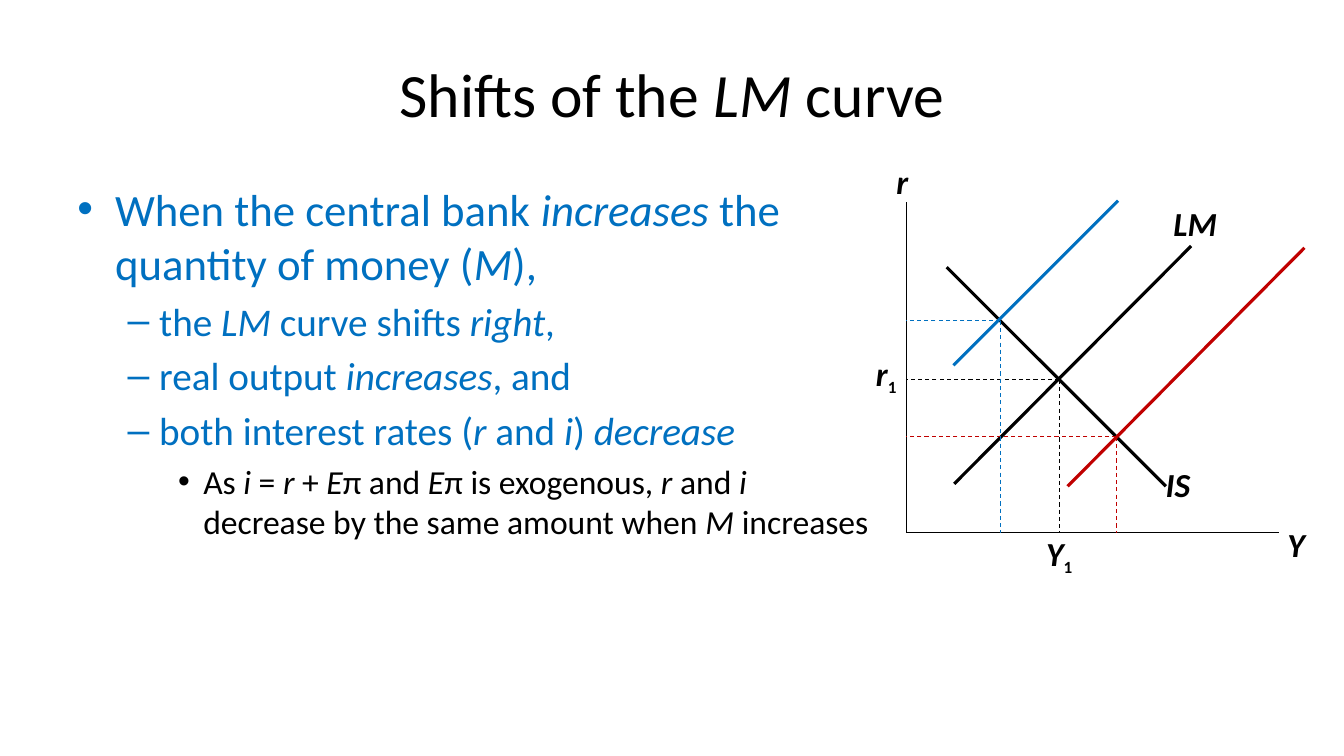
from lxml import etree
from pptx import Presentation
from pptx.dml.color import RGBColor
from pptx.enum.dml import MSO_LINE
from pptx.enum.shapes import MSO_CONNECTOR
from pptx.enum.text import PP_ALIGN
from pptx.oxml.ns import qn
from pptx.util import Inches, Pt

STRAIGHT = MSO_CONNECTOR.STRAIGHT
DASH = MSO_LINE.DASH
LEFT, CENTER = PP_ALIGN.LEFT, PP_ALIGN.CENTER

BLACK = RGBColor(0x00, 0x00, 0x00)
BLUE = RGBColor(0x00, 0x70, 0xC0)
RED = RGBColor(0xC0, 0x00, 0x00)

# The slide is a grid of 160 columns by 90 rows
CELL = Inches(1) / 12
ORIGIN_COLUMN, ORIGIN_ROW = 107.9, 63.4


def add_text(para, text, size, color=BLACK, bold=None, align=None, level=0):
    """Write text in a paragraph; * toggles italic, _ starts a subscript."""
    para.level = level
    para.alignment = align
    for part_number, part in enumerate(text.split("*")):
        for piece_number, piece in enumerate(part.split("_")):
            if not piece:
                continue
            span = para.add_run()
            span.text = piece
            font = span.font
            font.name = "Calibri"
            font.size = Pt(size)
            font.color.rgb = color
            font.bold = bold
            font.italic = part_number % 2 == 1
            if piece_number:
                font.size = Pt(21)
                font.italic = False
                font._element.set("baseline", "-25000")


def add_line(start, end, color, width, dash=None):
    """Draw a line between two points measured from the graph's origin."""
    (x1, y1), (x2, y2) = start, end
    line = slide.shapes.add_connector(
        STRAIGHT,
        round((ORIGIN_COLUMN + x1) * CELL), round((ORIGIN_ROW - y1) * CELL),
        round((ORIGIN_COLUMN + x2) * CELL), round((ORIGIN_ROW - y2) * CELL))
    line.line.color.rgb = color
    line.line.width = Pt(width)
    line.line.dash_style = dash
    etree.SubElement(line._element.spPr, qn("a:effectLst"))


deck = Presentation()
deck.slide_width = round(160 * CELL)
deck.slide_height = round(90 * CELL)
slide = deck.slides.add_slide(deck.slide_layouts[1])

# Title and body placeholders
title, body = slide.placeholders
for box, area in ((title, (8, 3.6, 144, 15)), (body, (8, 21, 96.8, 59.4))):
    box.left, box.top, box.width, box.height = (round(n * CELL) for n in area)

add_text(title.text_frame.paragraphs[0], "Shifts of the *LM* curve", 44)

bullets = [
    (0, "When the central bank *increases *the quantity of money (*M*),", BLUE),
    (1, "the *LM* curve shifts *right*,", BLUE),
    (1, "real output *increases*, and", BLUE),
    (1, "both interest rates (*r* and *i*) *decrease*", BLUE),
    (2, "As *i* = *r* + *E*π and *E*π is exogenous, *r* and *i* decrease "
        "by the same amount when *M* increases", BLACK),
]
for number, (level, text, color) in enumerate(bullets):
    frame = body.text_frame
    para = frame.add_paragraph() if number else frame.paragraphs[0]
    add_text(para, text, 32 - 4 * level, color, level=level)

# Axes
for axis_end in ((0, 39.4), (44.4, 0)):
    add_line((0, 0), axis_end, BLACK, 1)

# IS curve and the three LM curves
curves = [
    ((4.8, 31.6), (30.9, 5.5), BLACK),
    ((5.7, 5.8), (33.9, 34.1), BLACK),
    ((19.2, 5.5), (47.4, 33.9), RED),
    ((5.6, 19.9), (25.2, 39.5), BLUE),
]
for start, end, color in curves:
    add_line(start, end, color, 2.25)

# Dashed guides from each equilibrium on the IS curve to both axes
IS_SUM = 36.4
for output, color in ((18.2, BLACK), (25, RED), (11.2, BLUE)):
    rate = IS_SUM - output
    for foot in ((0, rate), (output, 0)):
        add_line((output, rate), foot, color, 0.75, DASH)

# Labels: text, left and top from the origin, width, alignment
labels = [
    ("*IS*", 29.7, 8.8, 9, LEFT),
    ("*Y*", 42.6, 1.6, 7.6, CENTER),
    ("*r*", -3.2, 44.8, 5.4, CENTER),
    ("*LM*", 30.6, 39.8, 10.2, LEFT),
    ("*r_1*", -5.4, 22, 6, CENTER),
    ("*Y_1*", 14.7, 0.6, 7, CENTER),
]
for text, x, y, width, align in labels:
    box = slide.shapes.add_textbox(
        round((ORIGIN_COLUMN + x) * CELL), round((ORIGIN_ROW - y) * CELL),
        round(width * CELL), round(6 * CELL))
    box.text_frame.word_wrap = True
    add_text(box.text_frame.paragraphs[0], text, 24, bold=True, align=align)

deck.save("out.pptx")
